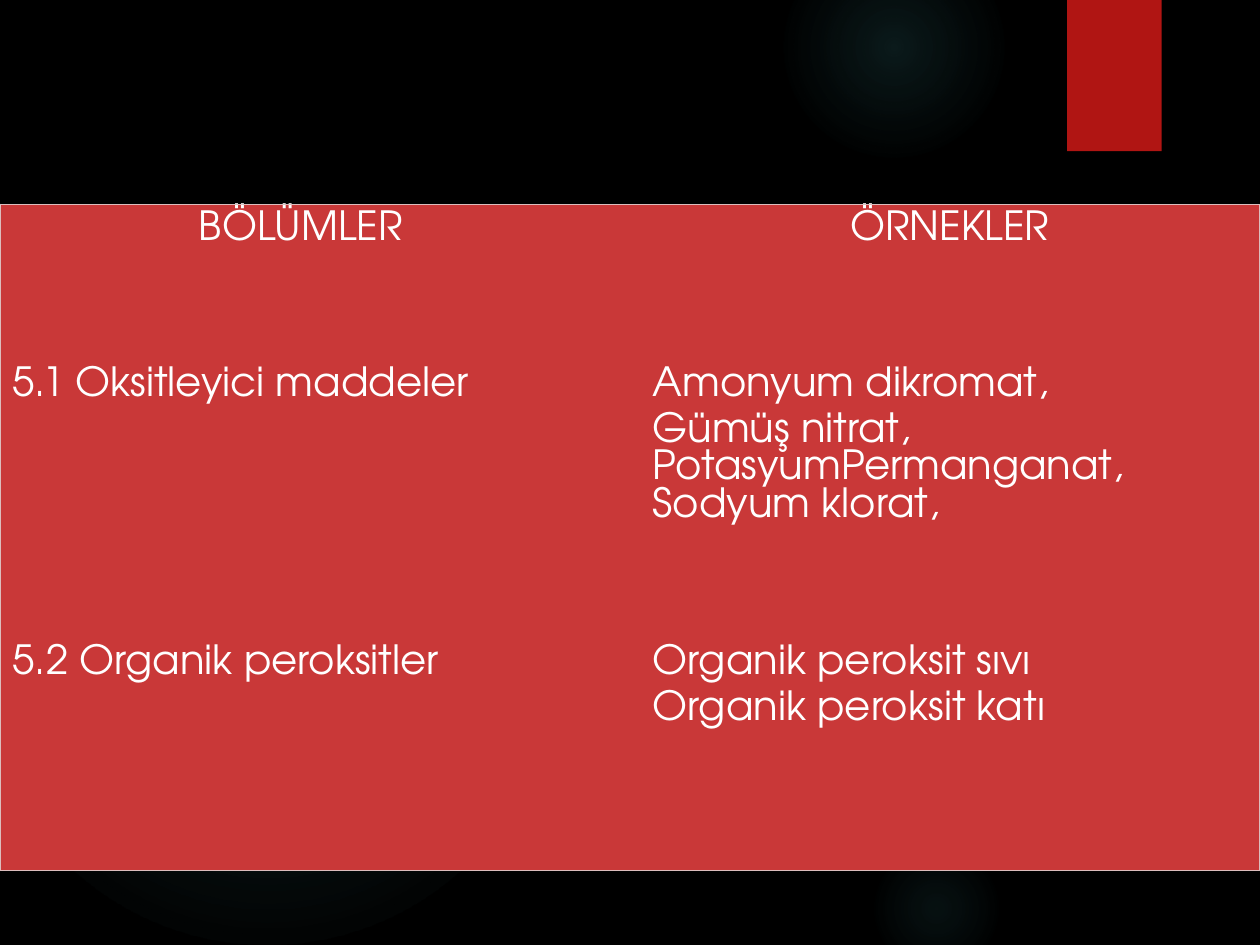
from lxml.etree import SubElement
from pptx import Presentation
from pptx.dml.color import RGBColor
from pptx.enum.shapes import MSO_SHAPE
from pptx.enum.text import MSO_ANCHOR, PP_ALIGN
from pptx.oxml import parse_xml
from pptx.oxml.ns import nsdecls, qn
from pptx.util import Pt

# Content: each cell is a list of paragraphs
ROWS = [
    (["BÖLÜMLER"], ["ÖRNEKLER"]),
    (["5.1 Oksitleyici maddeler"],
     ["Amonyum dikromat,", "Gümüş nitrat, PotasyumPermanganat, Sodyum klorat,"]),
    (["5.2 Organik peroksitler"],
     ["Organik peroksit sıvı", "Organik peroksit katı"]),
]

# Layout, in points
SLIDE_WIDTH, SLIDE_HEIGHT = 720, 540
TABLE_TOP = 116.64
COLUMN_WIDTHS = [365.76, 354.24]
ROW_HEIGHTS = [89.3, 159.1, 132.5]
HEADING_RIGHT_INSET = 29
RIBBON = (609.84, 0, 54, 86.4)

# Glows: left, top, diameter, then (position %, opacity %) stops
GLOWS = [
    (447.84, -36, 126, [(0, 14), (36, 7), (73, 0)]),
    (496.08, 480.24, 77.76, [(0, 9), (36, 5), (66, 0)]),
    (-12.24, 210.24, 329.76, [(0, 11), (36, 10), (75, 0)]),
]

BLACK, RED, TABLE_RED = "000000", "B01513", "C93838"
GLOW_COLOR, BORDER_COLOR = "50B9C1", "DCBDBD"
FONT_FORMAT = {"name": "TeX Gyre Adventor", "size": Pt(23), "bold": False}


def set_color(fill, color):
    fill.solid()
    fill.fore_color.rgb = RGBColor.from_string(color)


def add_plain_shape(slide, kind, *box):
    shape = slide.shapes.add_shape(kind, *map(Pt, box))
    shape.shadow.inherit = False
    shape.line.fill.background()
    return shape


def add_glow(slide, left, top, diameter, stops):
    shape = add_plain_shape(slide, MSO_SHAPE.OVAL, left, top, diameter, diameter)
    shape.fill.background()
    stop_xml = "".join(
        f'<a:gs pos="{position * 1000}"><a:srgbClr val="{GLOW_COLOR}">'
        f'<a:alpha val="{opacity * 1000}"/></a:srgbClr></a:gs>'
        for position, opacity in stops)
    gradient = parse_xml(
        f'<a:gradFill {nsdecls("a")} rotWithShape="1"><a:gsLst>{stop_xml}</a:gsLst>'
        '<a:path path="circle"><a:fillToRect l="50000" t="50000" r="50000" b="50000"/>'
        '</a:path></a:gradFill>')
    properties = shape.element.spPr
    properties.replace(properties.find(qn("a:noFill")), gradient)


def set_borders(cell, outer_sides):
    properties = cell._tc.get_or_add_tcPr()
    for index, side in enumerate("LRTB"):
        line = SubElement(properties, qn(f"a:ln{side}"), w=str(Pt(0.75)))
        if side in outer_sides:
            fill = SubElement(line, qn("a:solidFill"))
            SubElement(fill, qn("a:srgbClr"), val=BORDER_COLOR)
        else:
            SubElement(line, qn("a:noFill"))
        properties.insert(index, line)


def fill_cell(cell, lines, alignment):
    set_color(cell.fill, TABLE_RED)
    cell.vertical_anchor = MSO_ANCHOR.TOP
    frame = cell.text_frame
    frame.text = "\n".join(lines)
    for paragraph in frame.paragraphs:
        paragraph.alignment = alignment
        paragraph.space_before = Pt(4.6)
        font = paragraph.runs[0].font
        for name, value in FONT_FORMAT.items():
            setattr(font, name, value)
        set_color(font.fill, "FFFFFF")


def add_section_table(slide):
    table = slide.shapes.add_table(
        len(ROWS), len(COLUMN_WIDTHS), Pt(0), Pt(TABLE_TOP),
        Pt(sum(COLUMN_WIDTHS)), Pt(sum(ROW_HEIGHTS))).table
    table.first_row = table.horz_banding = False
    for column, width in zip(table.columns, COLUMN_WIDTHS):
        column.width = Pt(width)
    for row, height in zip(table.rows, ROW_HEIGHTS):
        row.height = Pt(height)
    for row_index, row in enumerate(ROWS):
        alignment = PP_ALIGN.LEFT if row_index else PP_ALIGN.CENTER
        vertical_sides = {0: "T", len(ROWS) - 1: "B"}.get(row_index, "")
        for column_index, lines in enumerate(row):
            cell = table.cell(row_index, column_index)
            fill_cell(cell, lines, alignment)
            set_borders(cell, "LR"[column_index] + vertical_sides)
    table.cell(0, 0).margin_right = Pt(HEADING_RIGHT_INSET)


def main():
    presentation = Presentation()
    presentation.slide_width = Pt(SLIDE_WIDTH)
    presentation.slide_height = Pt(SLIDE_HEIGHT)
    slide = presentation.slides.add_slide(presentation.slide_layouts[6])

    # Background and decoration
    set_color(slide.background.fill, BLACK)
    for glow in GLOWS:
        add_glow(slide, *glow)
    ribbon = add_plain_shape(slide, MSO_SHAPE.RECTANGLE, *RIBBON)
    set_color(ribbon.fill, RED)

    # Sections and their examples
    add_section_table(slide)
    presentation.save("out.pptx")


if __name__ == "__main__":
    main()
